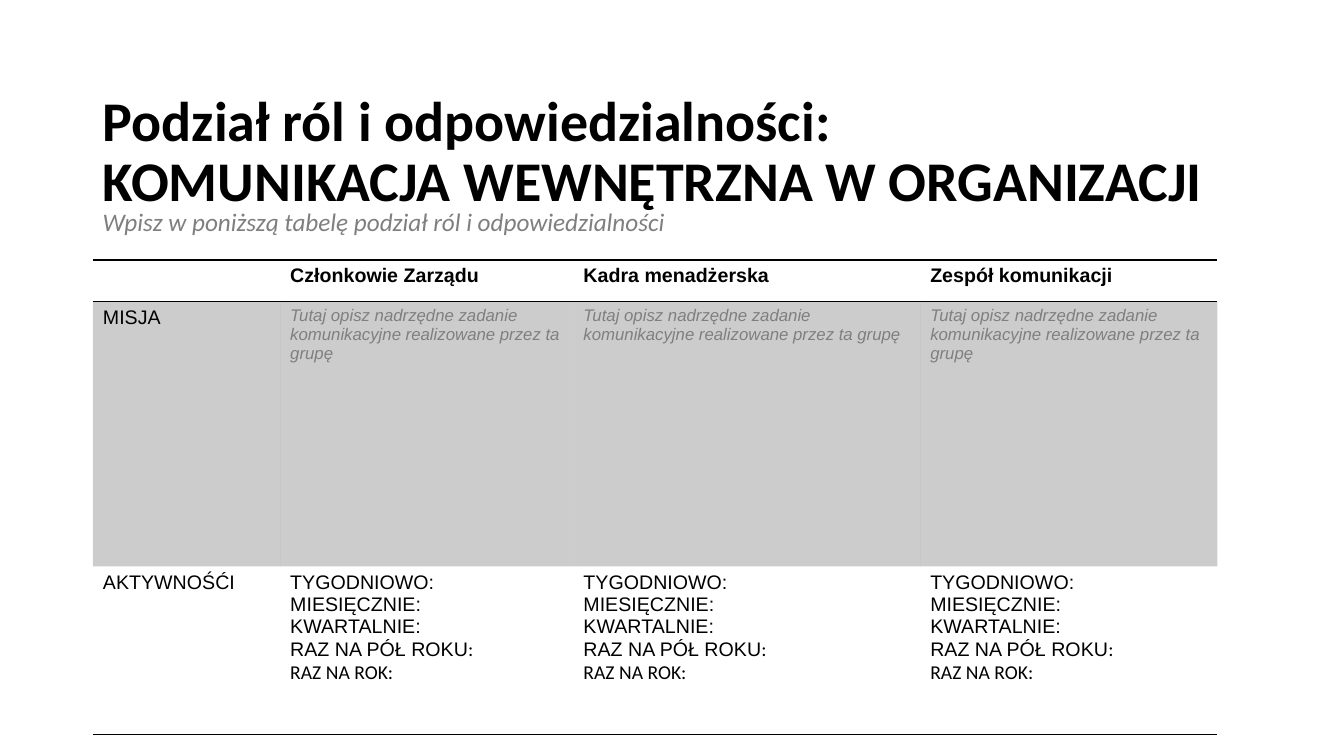
from lxml import etree
from pptx import Presentation
from pptx import util as u
from pptx.dml.color import RGBColor
from pptx.enum import text
from pptx.oxml.ns import qn

BLACK = RGBColor(0, 0, 0)
GREY = RGBColor(0x7F, 0x7F, 0x7F)
NO_STYLE = "{2D5ABB26-0587-4C30-8999-92F81FD0307C}"

MISSION = "Tutaj opisz nadrzędne zadanie komunikacyjne realizowane przez ta grupę"
GROUPS = ["Członkowie Zarządu", "Kadra menadżerska", "Zespół komunikacji"]
ACTIVITIES = [
    [("TYGODNIOWO:", "Arial")],
    [("MIESIĘCZNIE:", "Arial")],
    [("KWARTALNIE:", "Arial")],
    [("RAZ NA PÓŁ ROKU", "Arial"), (":", "Calibri")],
    [("RAZ NA ROK:", "Calibri")],
]
COLUMN_WIDTHS = [4.72, 7.39, 8.74, 7.49]
ROW_HEIGHTS = [1.04, 6.68, 4.24]


def format_run(run, size, name="Arial", color=BLACK, bold=False, italic=False):
    font = run.font
    font.size = u.Pt(size)
    font.name = name
    font.color.rgb = color
    font.bold = bold
    font.italic = italic


def write_cell(cell, content, size=14, **style):
    cell.text_frame.text = content
    format_run(cell.text_frame.paragraphs[0].runs[0], size, **style)


def write_activities(cell):
    frame = cell.text_frame
    for index, parts in enumerate(ACTIVITIES):
        paragraph = frame.paragraphs[0] if index == 0 else frame.add_paragraph()
        for words, font_name in parts:
            run = paragraph.add_run()
            run.text = words
            format_run(run, 14, font_name)


def add_border(cell, side):
    properties = cell._tc.get_or_add_tcPr()
    line = etree.SubElement(properties, qn(f"a:{side}"), w=str(u.Pt(1)))
    fill = etree.SubElement(line, qn("a:solidFill"))
    etree.SubElement(fill, qn("a:srgbClr"), val=str(BLACK))


def shade(cell):
    cell.fill.solid()
    cell.fill.fore_color.rgb = BLACK
    color = cell._tc.tcPr.find(f".//{qn('a:srgbClr')}")
    etree.SubElement(color, qn("a:alpha"), val="20000")


def place_title(slide, left, top, width, height):
    title = slide.shapes.title
    title.left, title.top, title.width, title.height = left, top, width, height
    frame = title.text_frame
    frame.text = "Podział ról i odpowiedzialności:\vKOMUNIKACJA WEWNĘTRZNA W ORGANIZACJI"
    frame.word_wrap = True
    frame.auto_size = text.MSO_AUTO_SIZE.NONE
    frame.vertical_anchor = text.MSO_ANCHOR.MIDDLE
    paragraph = frame.paragraphs[0]
    paragraph.alignment = text.PP_ALIGN.LEFT
    paragraph.line_spacing = 0.9
    for run in paragraph.runs:
        format_run(run, 40, "Calibri", bold=True)


def add_instruction(slide, left, top, width, height):
    frame = slide.shapes.add_textbox(left, top, width, height).text_frame
    frame.word_wrap = True
    frame.text = "Wpisz w poniższą tabelę podział ról i odpowiedzialności"
    format_run(frame.paragraphs[0].runs[0], 18, "Calibri", GREY, italic=True)


def add_roles_table(slide, left, top):
    shape = slide.shapes.add_table(
        len(ROW_HEIGHTS), len(COLUMN_WIDTHS), left, top,
        u.Cm(sum(COLUMN_WIDTHS)), u.Cm(sum(ROW_HEIGHTS)))
    table = shape.table
    table.first_row = table.horz_banding = False
    table._tbl.tblPr.find(qn("a:tableStyleId")).text = NO_STYLE
    for column, width in zip(table.columns, COLUMN_WIDTHS):
        column.width = u.Cm(width)
    for row, height in zip(table.rows, ROW_HEIGHTS):
        row.height = u.Cm(height)

    header, mission, activities = (list(row.cells) for row in table.rows)
    for cell in header:
        add_border(cell, "lnT")
    for cell in header + activities:
        add_border(cell, "lnB")
        cell.fill.background()
    for cell in mission:
        shade(cell)

    write_cell(mission[0], "MISJA")
    write_cell(activities[0], "AKTYWNOŚĆI")
    for index, group in enumerate(GROUPS, start=1):
        write_cell(header[index], group, bold=True)
        write_cell(mission[index], MISSION, 12, color=GREY, italic=True)
        write_activities(activities[index])


def main():
    presentation = Presentation()
    presentation.slide_width = u.Cm(33.87)
    presentation.slide_height = u.Cm(19.05)
    slide = presentation.slides.add_slide(presentation.slide_layouts[5])
    left = u.Cm(2.34)
    place_title(slide, left, u.Cm(2.03), u.Cm(29.21), u.Cm(3.68))
    add_roles_table(slide, left, u.Cm(6.55))
    add_instruction(slide, left, u.Cm(5.08), u.Cm(19.96), u.Cm(1.02))
    presentation.save("out.pptx")


if __name__ == "__main__":
    main()
